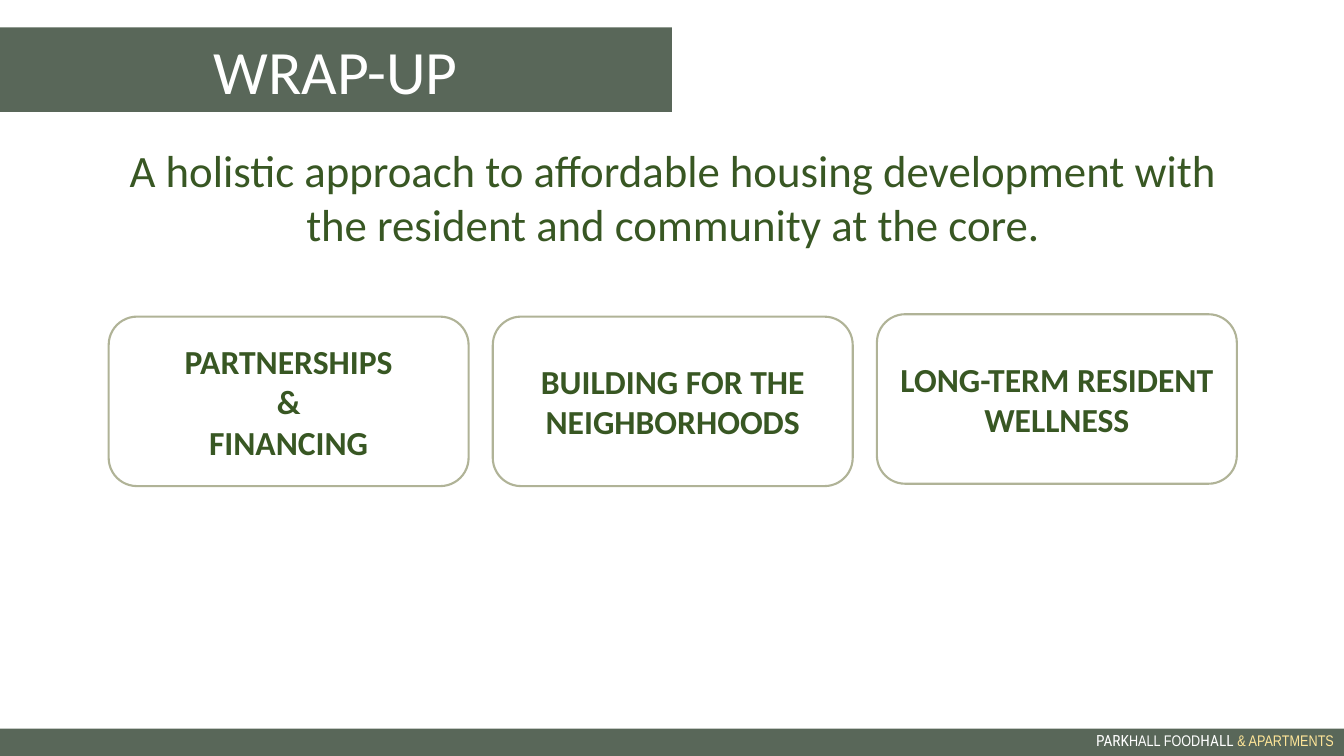
from pptx import Presentation
from pptx.dml.color import RGBColor
from pptx.enum.shapes import MSO_SHAPE
from pptx.enum.text import MSO_ANCHOR, MSO_AUTO_SIZE, PP_ALIGN
from pptx.util import Cm, Pt

SLIDE_WIDTH = 33.87
SLIDE_HEIGHT = 19.05


def paint(color_format, hex_color):
    color_format.rgb = RGBColor.from_string(hex_color)


class SlideBuilder:
    font = "Calibri"
    bar_color = "596759"
    text_color = "385723"
    outline_color = "B0B397"
    light_color = "FFFFFF"
    accent_color = "FFE699"

    def __init__(self, presentation):
        self.slide = presentation.slides.add_slide(presentation.slide_layouts[5])

    def format_run(self, run, size, color, font=None, bold=False):
        run.font.name = font or self.font
        run.font.size = Pt(size)
        run.font.bold = bold
        paint(run.font.color, color)

    def set_text(self, shape, text, size, color, bold=False, anchor=MSO_ANCHOR.MIDDLE):
        text_frame = shape.text_frame
        text_frame.text = text
        text_frame.word_wrap = True
        text_frame.auto_size = MSO_AUTO_SIZE.NONE
        text_frame.vertical_anchor = anchor
        for paragraph in text_frame.paragraphs:
            paragraph.alignment = PP_ALIGN.CENTER
            paragraph.line_spacing = 1.0
            for run in paragraph.runs:
                self.format_run(run, size, color, bold=bold)

    def fill(self, shape):
        shape.fill.solid()
        paint(shape.fill.fore_color, self.bar_color)
        shape.line.fill.background()

    def title(self, text, left, top, width, height):
        shape = self.slide.shapes.title
        shape.left, shape.top = Cm(left), Cm(top)
        shape.width, shape.height = Cm(width), Cm(height)
        self.fill(shape)
        self.set_text(shape, text, 44, self.light_color)

    def statement(self, text, left, top, width, height):
        shape = self.slide.shapes.add_textbox(Cm(left), Cm(top), Cm(width), Cm(height))
        self.set_text(shape, text, 32, self.text_color, anchor=MSO_ANCHOR.TOP)

    def card(self, text, left, top, width, height):
        shape = self.slide.shapes.add_shape(
            MSO_SHAPE.ROUNDED_RECTANGLE, Cm(left), Cm(top), Cm(width), Cm(height))
        shape.shadow.inherit = False
        shape.fill.background()
        shape.line.width = Pt(1.5)
        paint(shape.line.color, self.outline_color)
        self.set_text(shape, text, 24, self.text_color, bold=True)

    def bar(self, left, top, width, height):
        shape = self.slide.shapes.add_shape(
            MSO_SHAPE.RECTANGLE, Cm(left), Cm(top), Cm(width), Cm(height))
        shape.shadow.inherit = False
        self.fill(shape)

    def footer(self, parts, left, top, width, height):
        shape = self.slide.shapes.add_textbox(Cm(left), Cm(top), Cm(width), Cm(height))
        shape.text_frame.word_wrap = True
        paragraph = shape.text_frame.paragraphs[0]
        paragraph.alignment = PP_ALIGN.RIGHT
        for text, font, color in parts:
            run = paragraph.add_run()
            run.text = text
            self.format_run(run, 11, color, font)


def main():
    presentation = Presentation()
    presentation.slide_width = Cm(SLIDE_WIDTH)
    presentation.slide_height = Cm(SLIDE_HEIGHT)
    builder = SlideBuilder(presentation)

    builder.title("WRAP-UP", 0, 0.69, SLIDE_WIDTH / 2, 2.13)
    builder.statement(
        "A holistic approach to affordable housing development with "
        "the resident and community at the core.", 2.82, 3.48, 28.3, 4.37)

    cards = [
        ("PARTNERSHIPS\n&\vFINANCING", 7.98),
        ("BUILDING FOR THE NEIGHBORHOODS", 7.98),
        ("LONG-TERM RESIDENT WELLNESS", 7.92),
    ]
    for column, (text, top) in enumerate(cards):
        builder.card(text, 2.74 + column * 9.68, top, 9.07, 4.27)

    builder.bar(0, 18.36, SLIDE_WIDTH, 0.69)
    builder.footer([
        ("PARK", "Roboto Condensed", builder.light_color),
        ("HALL FOOD", "Arial Narrow", builder.light_color),
        ("HALL ", "Roboto Condensed", builder.light_color),
        ("& APARTMENTS", "Arial Narrow", builder.accent_color),
    ], 24.43, 18.31, 9.44, 0.74)

    presentation.save("out.pptx")


if __name__ == "__main__":
    main()
